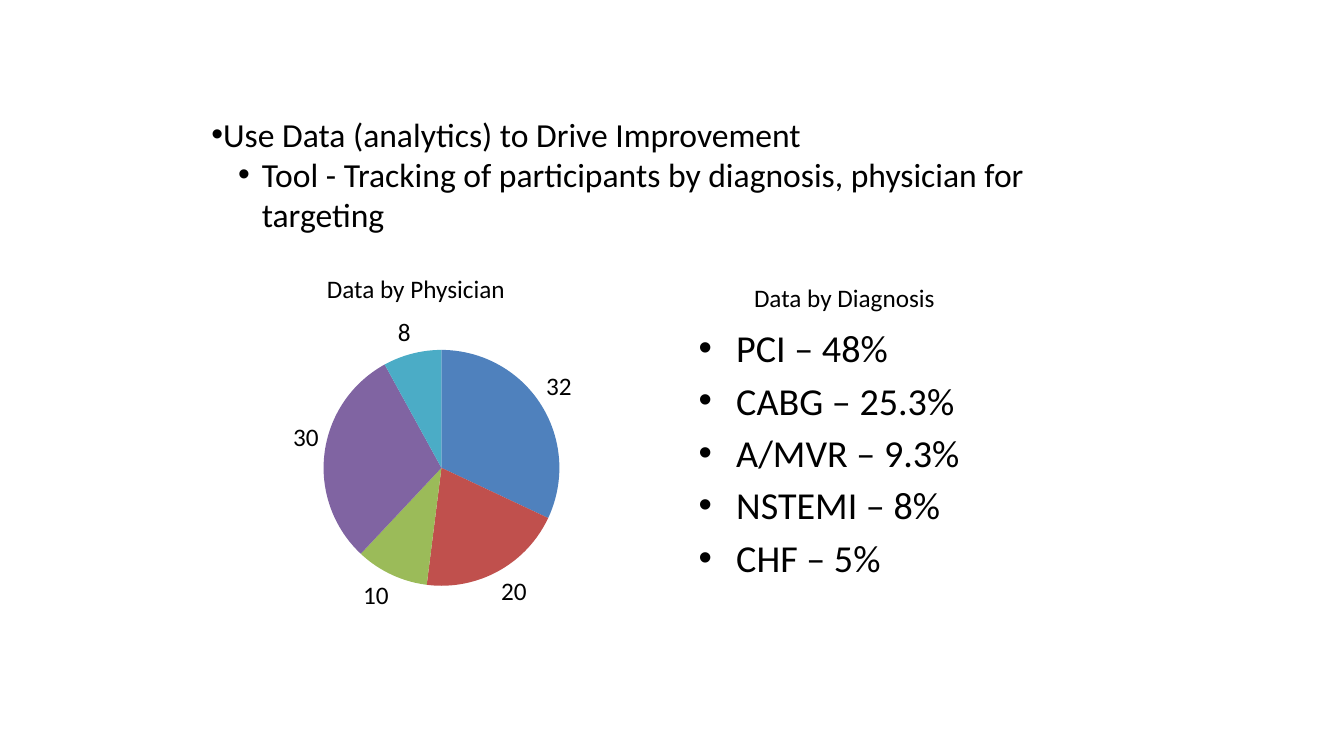
from lxml import etree
from pptx import Presentation, util as u
from pptx.chart.data import CategoryChartData
from pptx.dml.color import RGBColor
from pptx.enum import chart as ch, text
from pptx.oxml import ns

FONT = "Calibri"
BLACK = "000000"
PHYSICIANS = {"1": (32, "4F81BD"), "2": (20, "C0504D"), "3": (10, "9BBB59"),
              "4": (30, "8064A2"), "5": (8, "4BACC6")}
DIAGNOSES = ["PCI – 48%", "CABG – 25.3%", "A/MVR – 9.3%", "NSTEMI – 8%", "CHF – 5%"]


def color(value):
    return RGBColor.from_string(value)


def cm_box(*lengths):
    return [u.Cm(n) for n in lengths]


def style(font, size):
    font.name, font.size = FONT, u.Pt(size)
    font.color.rgb = color(BLACK)


def fill_text(tf, lines, size):
    tf.text = "\n".join(lines)
    tf.word_wrap = True
    tf.auto_size = text.MSO_AUTO_SIZE.NONE
    tf.vertical_anchor = text.MSO_ANCHOR.TOP
    for p in tf.paragraphs:
        for r in p.runs:
            style(r.font, size)


def bullet(p, left=0, hang=0):
    """Give p a bullet; left and hang are in centimetres."""
    pPr = p._p.get_or_add_pPr()
    pPr.set("marL", str(u.Cm(left)))
    pPr.set("indent", str(-u.Cm(hang)))
    etree.SubElement(pPr, ns.qn("a:buFont"), typeface="Arial")
    etree.SubElement(pPr, ns.qn("a:buChar"), char="•")


def add_intro(s, box):
    tf = s.shapes.add_textbox(*box).text_frame
    fill_text(tf, ["Use Data (analytics) to Drive Improvement",
                   "Tool - Tracking of participants by diagnosis, physician for targeting"], 24)
    main, tool = tf.paragraphs
    bullet(main)
    tool.level = 1
    bullet(tool, 1.27, 0.6)


def add_heading(s, box, heading):
    tf = s.shapes.add_textbox(*box).text_frame
    fill_text(tf, [heading], 18)
    tf.paragraphs[0].alignment = text.PP_ALIGN.CENTER


def add_diagnosis_list(s, box):
    sp = s.placeholders[1]
    sp.left, sp.top, sp.width, sp.height = box
    fill_text(sp.text_frame, DIAGNOSES, 27.2)
    for i, p in enumerate(sp.text_frame.paragraphs):
        bullet(p, 0.95, 0.95)
        p.space_before = u.Pt(4.8 if i else 0)


def set_plot_layout(chart, **fractions):
    """Fix the inner plot area as fractions of the chart."""
    area = chart._chartSpace.find(".//" + ns.qn("c:plotArea"))
    for old in area.findall(ns.qn("c:layout")):
        area.remove(old)
    layout = etree.Element(ns.qn("c:layout"))
    manual = etree.SubElement(layout, ns.qn("c:manualLayout"))
    settings = {"layoutTarget": "inner", "xMode": "edge", "yMode": "edge", **fractions}
    for tag, val in settings.items():
        etree.SubElement(manual, ns.qn("c:" + tag), val=str(val))
    area.insert(0, layout)


def add_physician_pie(s, box):
    data = CategoryChartData()
    data.categories = list(PHYSICIANS)
    data.add_series("Series 1", [value for value, _ in PHYSICIANS.values()])
    chart = s.shapes.add_chart(ch.XL_CHART_TYPE.PIE, *box, data).chart
    chart.has_title = chart.has_legend = False
    style(chart.font, 10)
    set_plot_layout(chart, x=0.22, y=0.145, w=0.585, h=0.72)
    plot = chart.plots[0]
    plot.vary_by_categories = True
    for i, (_, fill) in enumerate(PHYSICIANS.values()):
        wedge = plot.series[0].points[i].format
        wedge.fill.solid()
        wedge.fill.fore_color.rgb = color(fill)
        wedge.line.fill.background()
    labels = plot.series[0].data_labels
    labels.show_value = True
    labels.position = ch.XL_LABEL_POSITION.OUTSIDE_END
    style(labels.font, 18)


def main():
    prs = Presentation()
    prs.slide_width, prs.slide_height = cm_box(33.87, 19.05)
    s = prs.slides.add_slide(prs.slide_layouts[1])
    title = s.shapes.title._element
    title.getparent().remove(title)
    add_physician_pie(s, cm_box(5.92, 7.62, 10.16, 8.26))
    add_intro(s, cm_box(5.08, 2.74, 23.5, 6.4))
    add_diagnosis_list(s, cm_box(17.35, 8.05, 9.96, 6.15))
    add_heading(s, cm_box(5.08, 6.77, 10.8, 1.02), "Data by Physician")
    add_heading(s, cm_box(15.88, 6.99, 10.8, 1.02), "Data by Diagnosis")
    prs.save("out.pptx")


if __name__ == "__main__":
    main()
